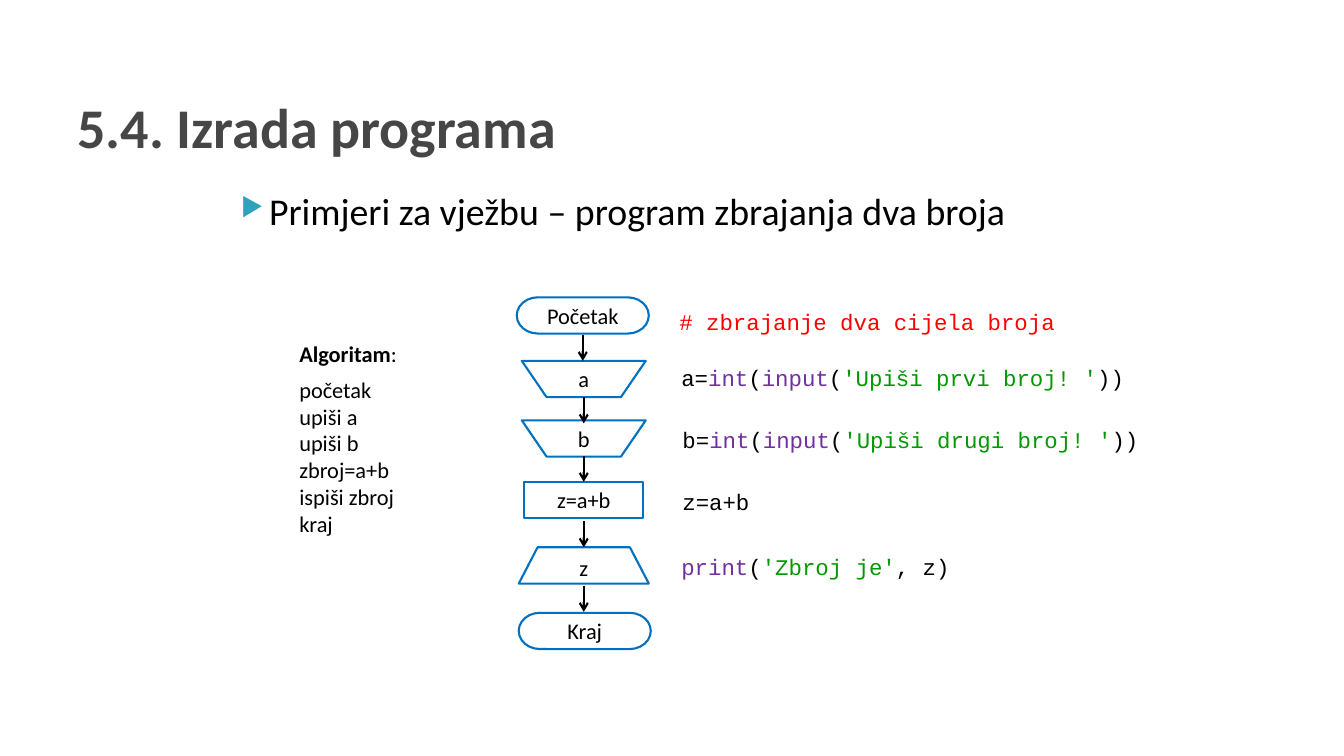
from lxml.etree import SubElement
from pptx import Presentation
from pptx.dml.color import RGBColor
from pptx.enum.shapes import MSO_CONNECTOR, MSO_SHAPE
from pptx.enum.text import MSO_ANCHOR, PP_ALIGN
from pptx.oxml.ns import qn
from pptx.util import Inches, Pt

BLACK = RGBColor(0x00, 0x00, 0x00)
GRAY = RGBColor(0x46, 0x46, 0x46)
BLUE = RGBColor(0x00, 0x70, 0xC0)
TEAL = RGBColor(0x2D, 0xA2, 0xBF)
PURPLE = RGBColor(0x70, 0x30, 0xA0)
GREEN = RGBColor(0x00, 0x99, 0x00)
RED = RGBColor(0xFF, 0x00, 0x00)

SANS = {"name": "Calibri", "size": Pt(16), "bold": False}
CODE = {"name": "Courier New", "size": Pt(16), "bold": False}
STEP_HEIGHT = 0.36
ARROW_LENGTH = 0.26
CODE_HEIGHT = 0.37

ALGORITHM = ["početak", "upiši a", "upiši b", "zbroj=a+b", "ispiši zbroj", "kraj"]

# Label, outline, centre and top within the flowchart box, width
STEPS = [
    ("Početak", MSO_SHAPE.FLOWCHART_TERMINATOR, 0.66, 0, 1.31),
    ("a", MSO_SHAPE.FLOWCHART_MANUAL_OPERATION, 0.67, 0.63, 1.23),
    ("b", MSO_SHAPE.FLOWCHART_MANUAL_OPERATION, 0.67, 1.22, 1.23),
    ("z=a+b", MSO_SHAPE.RECTANGLE, 0.67, 1.83, 1.18),
    ("z", MSO_SHAPE.TRAPEZOID, 0.67, 2.48, 1.29),
    ("Kraj", MSO_SHAPE.FLOWCHART_TERMINATOR, 0.68, 3.13, 1.31),
]
ARROWS = [(0.66, 0.37), (0.67, 0.99), (0.67, 1.57), (0.67, 2.22), (0.67, 2.86)]


def input_line(variable, prompt):
    return [(variable + "=", BLACK), ("int", PURPLE), ("(", BLACK), ("input", PURPLE),
            ("(", BLACK), (prompt, GREEN), ("))", BLACK)]


# Left and top within the code box, width, coloured parts
CODE_LINES = [
    (0, 0, 4.17, [("# zbrajanje dva cijela broja", RED)]),
    (0.02, 0.55, 4.66, input_line("a", "'Upiši prvi broj! '")),
    (0.03, 1.17, 4.78, input_line("b", "'Upiši drugi broj! '")),
    (0.03, 1.78, 1.5, [("z=a+b", BLACK)]),
    (0.02, 2.43, 3.4, [("print", PURPLE), ("(", BLACK), ("'Zbroj je'", GREEN), (", z)", BLACK)]),
]


def add_run(paragraph, text, style, color=BLACK):
    run = paragraph.add_run()
    run.text = text
    for attribute, value in style.items():
        setattr(run.font, attribute, value)
    run.font.color.rgb = color


def add_text_frame(slide, left, top, width, height):
    box = slide.shapes.add_textbox(*map(Inches, (left, top, width, height)))
    box.text_frame.word_wrap = True
    return box.text_frame


def add_title(slide, left, top, width, height):
    title = slide.shapes.title
    bounds = {"left": left, "top": top, "width": width, "height": height}
    for attribute, value in bounds.items():
        setattr(title, attribute, Inches(value))
    title.text_frame.vertical_anchor = MSO_ANCHOR.MIDDLE
    paragraph = title.text_frame.paragraphs[0]
    paragraph.alignment = PP_ALIGN.LEFT
    add_run(paragraph, "5.4. Izrada programa", SANS | {"size": Pt(40), "bold": True}, GRAY)


def add_bullet(paragraph):
    properties = paragraph._p.get_or_add_pPr()
    properties.set("marL", str(Inches(0.4)))
    properties.set("indent", str(Inches(-0.28)))
    color = SubElement(properties, qn("a:buClr"))
    SubElement(color, qn("a:srgbClr"), val=str(TEAL))
    SubElement(properties, qn("a:buSzPct"), val="68000")
    SubElement(properties, qn("a:buChar"), char="▶")


def add_topic(slide, left, top, width, height):
    paragraph = add_text_frame(slide, left, top, width, height).paragraphs[0]
    add_bullet(paragraph)
    paragraph.alignment = PP_ALIGN.JUSTIFY
    add_run(paragraph, "Primjeri za vježbu – program zbrajanja dva broja",
            SANS | {"size": Pt(27)})


def add_algorithm(slide, left, top, width, height):
    frame = add_text_frame(slide, left, top, width, height)
    heading = frame.paragraphs[0]
    heading.space_after = Pt(6)
    add_run(heading, "Algoritam", SANS | {"bold": True})
    add_run(heading, ":", SANS)
    for line in ALGORITHM:
        add_run(frame.add_paragraph(), line, SANS)


def add_step(shapes, label, outline, center, top, width):
    step = shapes.add_shape(outline, Inches(center - width / 2), Inches(top),
                            Inches(width), Inches(STEP_HEIGHT))
    if outline == MSO_SHAPE.TRAPEZOID:
        step.adjustments[0] = 0.52
    step.shadow.inherit = False
    step.fill.background()
    step.line.color.rgb = BLUE
    step.line.width = Pt(1.5)
    step.text_frame.vertical_anchor = MSO_ANCHOR.MIDDLE
    paragraph = step.text_frame.paragraphs[0]
    paragraph.alignment = PP_ALIGN.CENTER
    add_run(paragraph, label, SANS)


def add_arrow(shapes, x, top):
    arrow = shapes.add_connector(MSO_CONNECTOR.STRAIGHT, Inches(x), Inches(top),
                                 Inches(x), Inches(top + ARROW_LENGTH))
    arrow.line.color.rgb = BLACK
    arrow.line.width = Pt(1.5)
    SubElement(arrow.line._get_or_add_ln(), qn("a:tailEnd"), type="arrow")
    SubElement(arrow._element.spPr, qn("a:effectLst"))


def add_flowchart(slide, left, top):
    shapes = slide.shapes.add_group_shape().shapes
    for label, outline, center, offset, width in STEPS:
        add_step(shapes, label, outline, left + center, top + offset, width)
    for center, offset in ARROWS:
        add_arrow(shapes, left + center, top + offset)


def add_code(slide, left, top):
    for indent, offset, width, parts in CODE_LINES:
        frame = add_text_frame(slide, left + indent, top + offset, width, CODE_HEIGHT)
        for text, color in parts:
            add_run(frame.paragraphs[0], text, CODE, color)


def main():
    presentation = Presentation()
    presentation.slide_width = Inches(13.33)
    presentation.slide_height = Inches(7.5)
    slide = presentation.slides.add_slide(presentation.slide_layouts[5])
    add_title(slide, 0.67, 0.69, 12, 1.12)
    add_topic(slide, 2.17, 1.81, 9, 0.88)
    add_algorithm(slide, 2.87, 3.33, 1.81, 2.07)
    add_flowchart(slide, 5.12, 2.95)
    add_code(slide, 6.64, 3.01)
    presentation.save("out.pptx")


if __name__ == "__main__":
    main()
